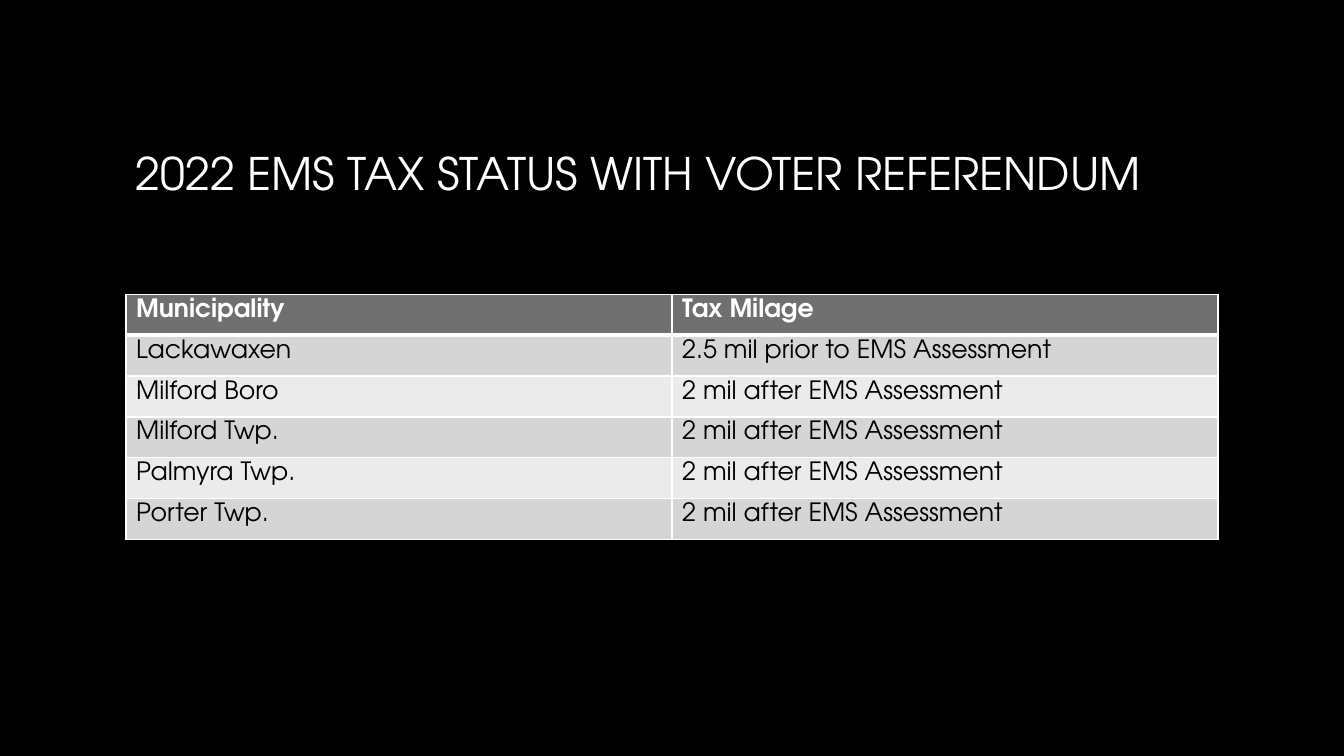
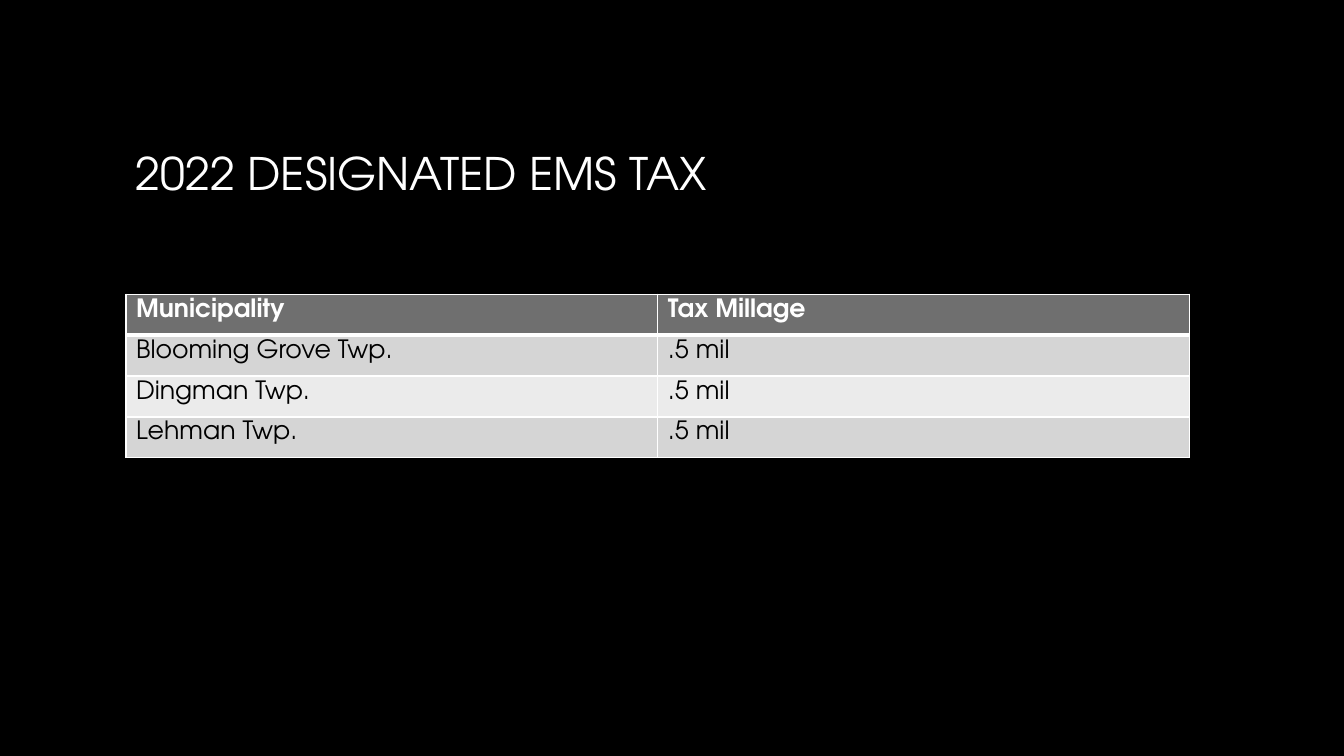
from dataclasses import dataclass

from lxml import etree
from pptx import Presentation
from pptx.dml.color import RGBColor
from pptx.enum.text import MSO_ANCHOR
from pptx.oxml.ns import qn
from pptx.slide import Slide
from pptx.table import _Cell
from pptx.util import Inches, Pt

MIDDLE = MSO_ANCHOR.MIDDLE
TOP = MSO_ANCHOR.TOP
BLANK_LAYOUT = 6


@dataclass(frozen=True)
class Theme:
    font: str = "TeX Gyre Adventor"
    background: str = "000000"
    title_fade: tuple[str, str] = ("FFFFFF", "A6A6A6")
    title_angle: int = 267
    header_fill: str = "6F6F6F"
    header_text: str = "FFFFFF"
    body_text: str = "000000"
    bands: tuple[str, str] = ("D5D5D5", "EBEBEB")
    border: str = "FFFFFF"
    border_width: float = 1
    header_rule: float = 3
    title_size: int = 32
    table_size: int = 18
    table_spacing: float = 0.9


@dataclass(frozen=True)
class Frame:
    """Shared slide geometry: inches, with the row height in points."""
    width: float = 13.33
    height: float = 7.5
    left: float = 1.25
    title_top: float = 0.67
    title_width: float = 10.83
    title_height: float = 2.08
    table_top: float = 2.92
    row_points: float = 29.2
    cell_top: float = 0.06


@dataclass(frozen=True)
class TaxSlide:
    title: str
    table_width: float
    rows: list[tuple[str, str]]


THEME = Theme()
FRAME = Frame()

TAX_SLIDES = [
    TaxSlide("2022 EMS TAX STATUS WITH VOTER REFERENDUM", 10.83, [
        ("Municipality", "Tax Milage"),
        ("Lackawaxen", "2.5 mil prior to EMS Assessment"),
        ("Milford Boro", "2 mil after EMS Assessment"),
        ("Milford Twp.", "2 mil after EMS Assessment"),
        ("Palmyra Twp.", "2 mil after EMS Assessment"),
        ("Porter Twp.", "2 mil after EMS Assessment"),
    ]),
    TaxSlide("2022 DESIGNATED EMS TAX", 10.55, [
        ("Municipality", "Tax Millage"),
        ("Blooming Grove Twp.", ".5 mil"),
        ("Dingman Twp.", ".5 mil"),
        ("Lehman Twp.", ".5 mil"),
    ]),
]


def rgb(value: str) -> RGBColor:
    return RGBColor.from_string(value)


def add_title(slide: Slide, title: str) -> None:
    box = slide.shapes.add_textbox(
        Inches(FRAME.left), Inches(FRAME.title_top),
        Inches(FRAME.title_width), Inches(FRAME.title_height))
    frame = box.text_frame
    frame.word_wrap = True
    frame.vertical_anchor = MIDDLE
    frame.text = title
    font = frame.paragraphs[0].runs[0].font
    font.name = THEME.font
    font.size = Pt(THEME.title_size)
    font.fill.gradient()
    font.fill.gradient_angle = THEME.title_angle
    for stop, color in zip(font.fill.gradient_stops, THEME.title_fade):
        stop.color.rgb = rgb(color)


def set_borders(cell: _Cell, top: float, bottom: float) -> None:
    properties = cell._tc.get_or_add_tcPr()
    side = THEME.border_width
    for tag, width in (("lnL", side), ("lnR", side), ("lnT", top), ("lnB", bottom)):
        line = etree.SubElement(properties, qn(f"a:{tag}"), w=str(Pt(width)))
        fill = etree.SubElement(line, qn("a:solidFill"))
        etree.SubElement(fill, qn("a:srgbClr"), val=THEME.border)


def format_cell(cell: _Cell, text: str, row: int) -> None:
    is_header = row == 0
    # The heavy rule is shared by the header and the first body row
    set_borders(cell,
                THEME.header_rule if row == 1 else THEME.border_width,
                THEME.header_rule if is_header else THEME.border_width)
    cell.fill.solid()
    cell.fill.fore_color.rgb = rgb(
        THEME.header_fill if is_header else THEME.bands[(row - 1) % 2])
    cell.margin_top = Inches(FRAME.cell_top)
    cell.margin_bottom = 0
    cell.vertical_anchor = TOP
    cell.text_frame.text = text
    paragraph = cell.text_frame.paragraphs[0]
    paragraph.line_spacing = THEME.table_spacing
    font = paragraph.runs[0].font
    font.name = THEME.font
    font.size = Pt(THEME.table_size)
    font.bold = is_header
    font.color.rgb = rgb(THEME.header_text if is_header else THEME.body_text)


def add_tax_table(slide: Slide, content: TaxSlide) -> None:
    row_count, column_count = len(content.rows), len(content.rows[0])
    table = slide.shapes.add_table(
        row_count, column_count, Inches(FRAME.left), Inches(FRAME.table_top),
        Inches(content.table_width), Pt(FRAME.row_points * row_count)).table
    table.horz_banding = False
    for row, texts in enumerate(content.rows):
        for column, text in enumerate(texts):
            format_cell(table.cell(row, column), text, row)


def main() -> None:
    deck = Presentation()
    deck.slide_width = Inches(FRAME.width)
    deck.slide_height = Inches(FRAME.height)
    for content in TAX_SLIDES:
        slide = deck.slides.add_slide(deck.slide_layouts[BLANK_LAYOUT])
        slide.background.fill.solid()
        slide.background.fill.fore_color.rgb = rgb(THEME.background)
        add_title(slide, content.title)
        add_tax_table(slide, content)
    deck.save("out.pptx")


if __name__ == "__main__":
    main()
